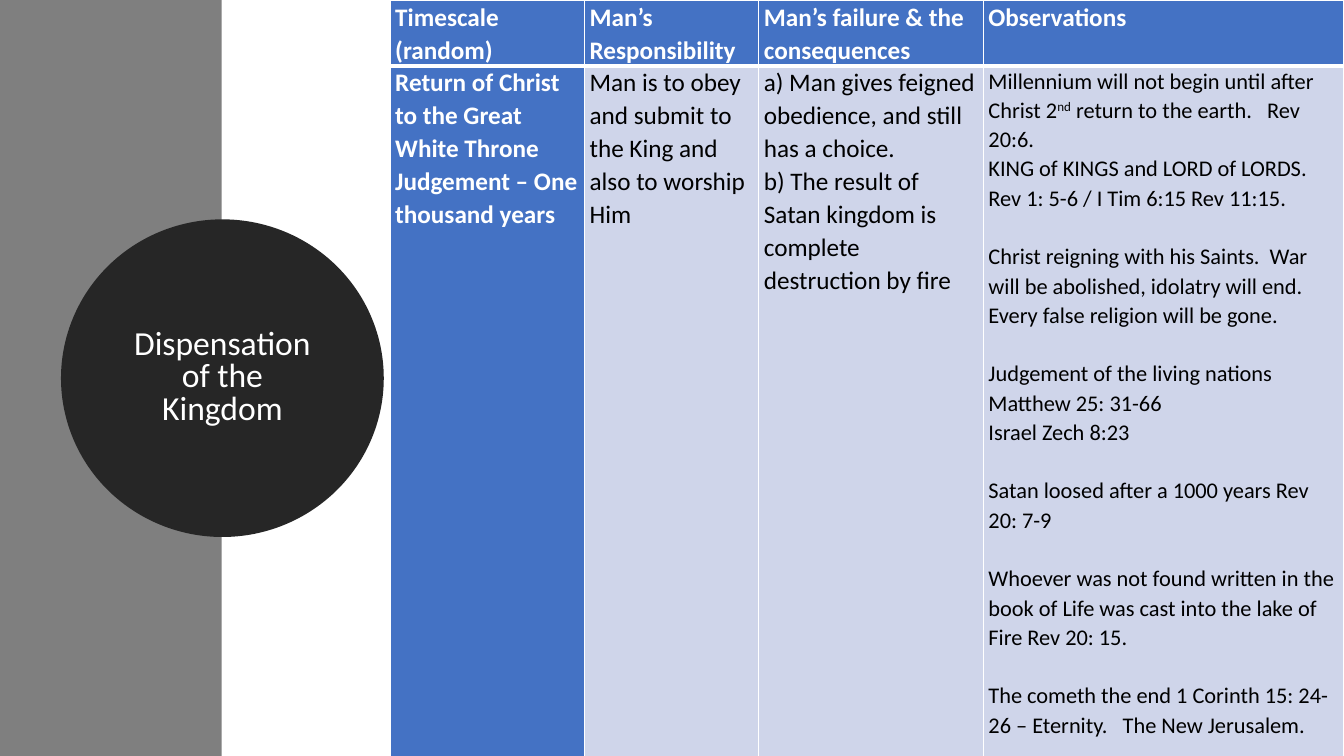
from lxml import etree
from pptx import Presentation
from pptx.dml.color import RGBColor
from pptx.enum.shapes import MSO_SHAPE
from pptx.enum.text import MSO_ANCHOR, MSO_AUTO_SIZE, PP_ALIGN
from pptx.oxml.ns import qn
from pptx.util import Cm, Pt

RECTANGLE, ELLIPSE = MSO_SHAPE.RECTANGLE, MSO_SHAPE.OVAL
MIDDLE, CENTER, NO_AUTOFIT = MSO_ANCHOR.MIDDLE, PP_ALIGN.CENTER, MSO_AUTO_SIZE.NONE

WHITE, BLACK, GRAY, CHARCOAL = "FFFFFF", "000000", "7F7F7F", "262626"
BLUE, PALE_BLUE = "4472C4", "CFD5EA"
FONT = "Calibri"
LINE_SPACING = 1.07
GROUP_GAP = 20.9

COLUMN_WIDTHS = [4.9, 4.39, 5.66, 9.09]
ROW_HEIGHTS = [1.4, 17.65]
HEADINGS = ["Timescale (random)", "Man’s Responsibility",
            "Man’s failure & the consequences", "Observations"]
TIMESCALE = "Return of Christ to the Great White Throne Judgement – One thousand years"
RESPONSIBILITY = "Man is to obey and submit to the King and also to worship Him"
FAILURE = ["a) Man gives feigned obedience, and still has a choice.",
           "b) The result of Satan kingdom is complete destruction by fire"]
OBSERVATIONS = [
    ["Millennium will not begin until after Christ 2^nd^ return to the earth.   Rev 20:6.",
     "KING of KINGS and LORD of LORDS.  Rev 1: 5-6 / I Tim 6:15 Rev 11:15."],
    ["Christ reigning with his Saints.  War will be abolished, idolatry will end.  "
     "Every false religion will be gone."],
    ["Judgement of the living nations Matthew 25: 31-66", "Israel Zech 8:23"],
    ["Satan loosed after a 1000 years Rev 20: 7-9"],
    ["Whoever was not found written in the book of Life was cast into the lake of "
     "Fire Rev 20: 15."],
    ["The cometh the end 1 Corinth 15: 24- 26 – Eternity.   The New Jerusalem."],
]


def color(value):
    return RGBColor.from_string(value)


def set_attributes(target, values):
    for name, value in values.items():
        setattr(target, name, value)


def format_font(font, size, font_color, bold=False):
    set_attributes(font, {"name": FONT, "size": Pt(size), "bold": bold})
    font.color.rgb = color(font_color)


def add_plain_shape(slide, kind, left, top, width, height, fill):
    shape = slide.shapes.add_shape(kind, Cm(left), Cm(top), Cm(width), Cm(height))
    shape.shadow.inherit = False
    shape.fill.solid()
    shape.fill.fore_color.rgb = color(fill)
    shape.line.fill.background()
    return shape


def format_title(title, text):
    set_attributes(title, {"left": Cm(2.9), "top": Cm(6.87),
                           "width": Cm(5.41), "height": Cm(5.32)})
    frame = title.text_frame
    frame.text = text
    set_attributes(frame, {"word_wrap": True, "auto_size": NO_AUTOFIT,
                           "vertical_anchor": MIDDLE})
    paragraph = frame.paragraphs[0]
    set_attributes(paragraph, {"alignment": CENTER, "line_spacing": 0.8})
    format_font(paragraph.runs[0].font, 24, WHITE)


def add_border(cell, side, width):
    properties = cell._tc.get_or_add_tcPr()
    line = etree.SubElement(properties, qn(f"a:ln{side}"), w=str(Pt(width)))
    fill = etree.SubElement(line, qn("a:solidFill"))
    etree.SubElement(fill, qn("a:srgbClr"), val=WHITE)


def write_paragraph(paragraph, text, size, font_color, bold):
    """Write the text, raising each part that stands between carets."""
    paragraph.line_spacing = LINE_SPACING
    for index, part in enumerate(text.split("^")):
        run = paragraph.add_run()
        run.text = part
        format_font(run.font, size, font_color, bold)
        if index % 2:
            run._r.get_or_add_rPr().set("baseline", "30000")


def fill_cell(cell, groups, fill, font_color, size=18, bold=False, thick_side="T"):
    """Fill a cell with groups of paragraphs, set apart by a line of space."""
    set_attributes(cell, {"margin_left": Cm(0.13), "margin_right": Cm(0.13),
                          "margin_top": 0, "margin_bottom": 0})
    for side in "LRTB":
        add_border(cell, side, 3 if side == thick_side else 1)
    cell.fill.solid()
    cell.fill.fore_color.rgb = color(fill)
    paragraph = cell.text_frame.paragraphs[0]
    for group_index, group in enumerate(groups):
        for text_index, text in enumerate(group):
            if group_index or text_index:
                paragraph = cell.text_frame.add_paragraph()
            write_paragraph(paragraph, text, size, font_color, bold)
            if group_index and not text_index:
                paragraph.space_before = Pt(GROUP_GAP)


def add_dispensation_table(slide):
    table = slide.shapes.add_table(
        len(ROW_HEIGHTS), len(COLUMN_WIDTHS), Cm(9.83), Cm(0),
        Cm(sum(COLUMN_WIDTHS)), Cm(sum(ROW_HEIGHTS))).table
    for column, width in zip(table.columns, COLUMN_WIDTHS):
        column.width = Cm(width)
    for row, height in zip(table.rows, ROW_HEIGHTS):
        row.height = Cm(height)
    for index, heading in enumerate(HEADINGS):
        fill_cell(table.cell(0, index), [[heading]], BLUE, WHITE,
                  bold=True, thick_side="B")
    fill_cell(table.cell(1, 0), [[TIMESCALE]], BLUE, WHITE, bold=True)
    fill_cell(table.cell(1, 1), [[RESPONSIBILITY]], PALE_BLUE, BLACK)
    fill_cell(table.cell(1, 2), [FAILURE], PALE_BLUE, BLACK)
    fill_cell(table.cell(1, 3), OBSERVATIONS, PALE_BLUE, BLACK, size=16)


def main():
    presentation = Presentation()
    set_attributes(presentation, {"slide_width": Cm(33.87), "slide_height": Cm(19.05)})
    slide = presentation.slides.add_slide(presentation.slide_layouts[5])
    add_plain_shape(slide, RECTANGLE, 0, 0, 5.59, 19.05, GRAY)
    disc = add_plain_shape(slide, ELLIPSE, 1.78, 5.77, 7.65, 7.52, CHARCOAL)
    disc.line.color.rgb = color(CHARCOAL)
    disc.line.width = Pt(13.75)
    title = slide.shapes.title
    format_title(title, "Dispensation of the Kingdom")
    disc._element.addnext(title._element)
    add_dispensation_table(slide)
    presentation.save("out.pptx")


if __name__ == "__main__":
    main()
